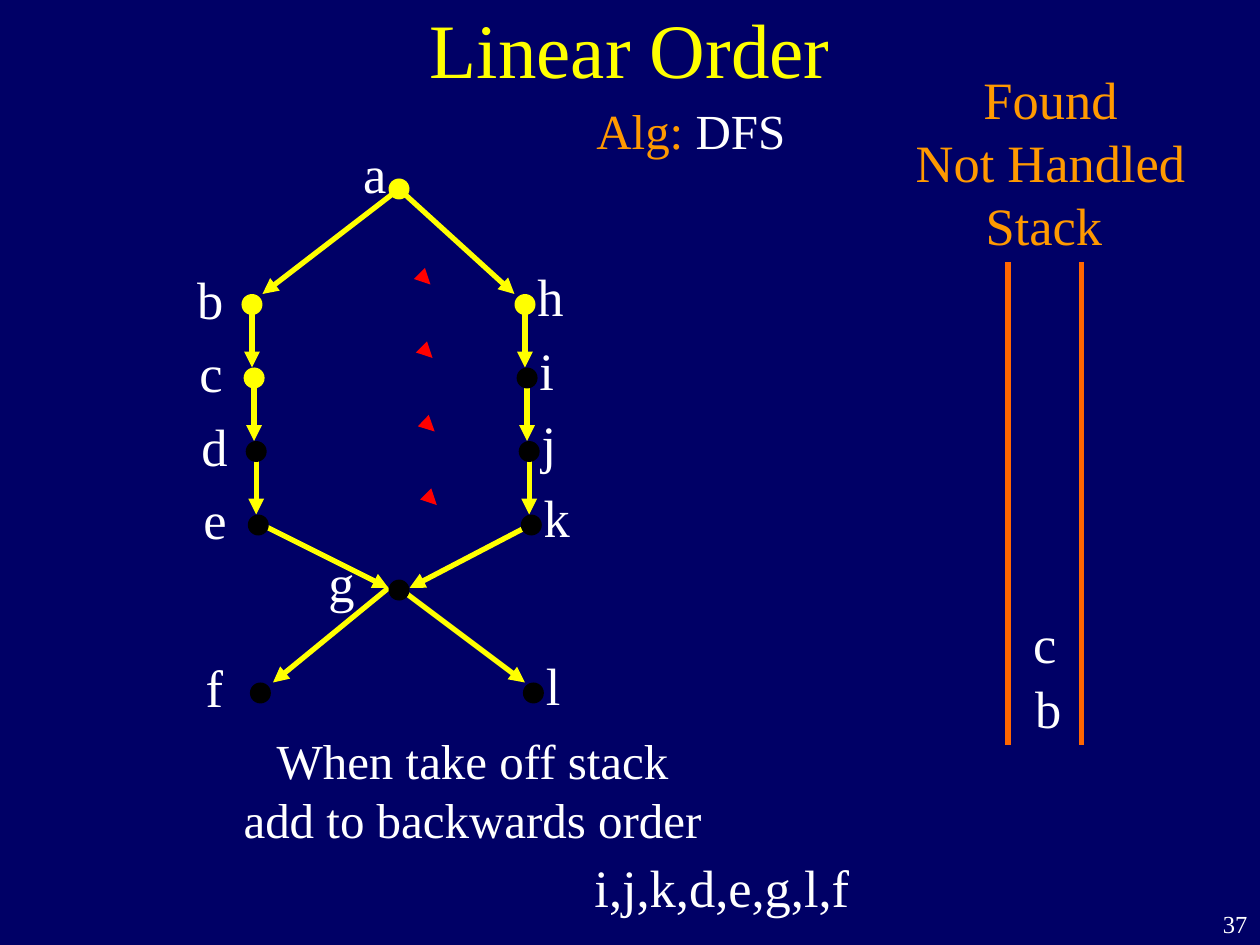
from pptx import Presentation
from pptx.dml.color import RGBColor
from pptx.enum.shapes import MSO_CONNECTOR as Connector, MSO_SHAPE as Shape
from pptx.enum.text import MSO_ANCHOR as Anchor, MSO_AUTO_SIZE as AutoSize, PP_ALIGN as Align
from pptx.oxml.ns import qn
from pptx.util import Inches, Pt
from lxml.etree import SubElement

COLUMNS, ROWS = 120, 90
NAVY, YELLOW, WHITE, BLACK = "000066", "FFFF00", "FFFFFF", "000000"
RED, ORANGE, AMBER = "FF0000", "FF6600", "FF9900"


def color(value):
    return RGBColor.from_string(value)


class SlideBuilder:
    font = "Times New Roman"
    line_width = Pt(3)
    dot_size = 2

    def __init__(self, presentation, layout_index):
        layout = presentation.slide_layouts[layout_index]
        self.slide = presentation.slides.add_slide(layout)
        self.column = presentation.slide_width / COLUMNS
        self.row = presentation.slide_height / ROWS
        background = self.slide.background.fill
        background.solid()
        background.fore_color.rgb = color(NAVY)

    def x(self, columns):
        return round(columns * self.column)

    def y(self, rows):
        return round(rows * self.row)

    def box(self, left, top, width, height):
        return self.x(left), self.y(top), self.x(width), self.y(height)

    def fill_frame(self, frame, lines, size, align):
        """Each line is a list of (text, colour) runs."""
        paragraph = frame.paragraphs[0]
        paragraph.alignment = align
        for number, line in enumerate(lines):
            if number:
                paragraph.add_line_break()
            for text, hue in line:
                run = paragraph.add_run()
                run.text = text
                formats = {"name": self.font, "size": Pt(size), "bold": False}
                for name, value in formats.items():
                    setattr(run.font, name, value)
                run.font.color.rgb = color(hue)

    def title(self, text, area):
        title = self.slide.shapes.title
        for name, value in zip(("left", "top", "width", "height"), self.box(*area)):
            setattr(title, name, value)
        formats = {"vertical_anchor": Anchor.MIDDLE, "auto_size": AutoSize.NONE}
        for name, value in formats.items():
            setattr(title.text_frame, name, value)
        self.fill_frame(title.text_frame, [[(text, YELLOW)]], 44, Align.CENTER)

    def text(self, lines, area, size=30, align=Align.LEFT):
        frame = self.slide.shapes.add_textbox(*self.box(*area)).text_frame
        formats = {"word_wrap": False, "auto_size": AutoSize.SHAPE_TO_FIT_TEXT}
        for name, value in formats.items():
            setattr(frame, name, value)
        self.fill_frame(frame, lines, size, align)

    def line(self, start, end, hue, arrow=False):
        connector = self.slide.shapes.add_connector(
            Connector.STRAIGHT, self.x(start[0]), self.y(start[1]),
            self.x(end[0]), self.y(end[1]))
        connector.line.width = self.line_width
        connector.line.color.rgb = color(hue)
        properties = connector.element.spPr
        if arrow:
            SubElement(properties.find(qn("a:ln")), qn("a:tailEnd"), type="triangle")
        SubElement(properties, qn("a:effectLst"))

    def dot(self, center, hue):
        half = self.dot_size / 2
        dot = self.slide.shapes.add_shape(Shape.OVAL, *self.box(
            center[0] - half, center[1] - half, self.dot_size, self.dot_size))
        dot.shadow.inherit = False
        dot.fill.solid()
        dot.fill.fore_color.rgb = color(hue)
        dot.line.fill.background()


# Graph layout: two chains, each drifting slightly right, joined at a and g
LEVELS = (29, 36, 43, 50, 66)
DRIFT = 0.2
FOUND = "abch"
LETTER_WIDTHS = {"a": 4.7, "c": 4.7, "e": 4.7, "f": 4.1, "i": 3.8, "j": 3.8, "l": 3.8}

nodes = {"a": (38, 18), "g": (38, 56.2)}
labels = {"a": (33.4, 12.8), "g": (30.1, 51.8)}
for step, (left, right, level) in enumerate(zip("bcdef", "hijkl", LEVELS)):
    shift = DRIFT * step
    nodes[left] = (24 + shift, level)
    nodes[right] = (50 + shift, level)
    labels[left] = (17.6 + shift, level - 4.2)
    labels[right] = (50 + shift, level - 4.4)

EDGES = [((38, 18), (25, 28)), ((38, 18), (49, 28)),
         ((25, 50), (37, 56)), ((50.5, 50), (39, 56)),
         ((37, 56), (26, 65)), ((38, 56), (50, 65))]
EDGES += [(nodes[name], (nodes[name][0], nodes[name][1] + 6)) for name in "bcdhij"]


def letter(builder, name, left, top):
    builder.text([[(name, WHITE)]], (left, top, LETTER_WIDTHS.get(name, 4.9), 7.2))


def main():
    presentation = Presentation()
    presentation.slide_width = Inches(10)
    presentation.slide_height = Inches(7.5)
    builder = SlideBuilder(presentation, 5)

    # Title and slide number
    builder.title("Linear Order", (9, -3, 102, 15))
    builder.text([[("37", WHITE)]], (114, 86, 6, 4), 14, Align.RIGHT)

    # Graph edges, then the red arrowheads between the chains
    for start, end in EDGES:
        builder.line(start, end, YELLOW, arrow=True)
    for step in range(4):
        tip = (40.9 + DRIFT * step, 27 + 7 * step)
        builder.line(tip, (tip[0] + 0.1, tip[1] + 0.1), RED, arrow=True)

    # Node labels and dots
    for name, center in nodes.items():
        letter(builder, name, *labels[name])
        builder.dot(center, YELLOW if name in FOUND else BLACK)

    # Stack with its heading and contents
    for column in (96, 103):
        builder.line((column, 25), (column, 71), ORANGE)
    heading = ("Found", "Not Handled", "Stack ")
    builder.text([[(line, AMBER)] for line in heading],
                 (86, 5.8, 28.1, 19.2), align=Align.CENTER)
    letter(builder, "c", 97.2, 57.6)
    letter(builder, "b", 97.4, 63.8)

    # Algorithm name, rule and resulting order
    builder.text([[("Alg:", AMBER), (" DFS", WHITE)]],
                 (55.6, 9, 20.4, 6.8), 28, Align.CENTER)
    rule = ("When take off stack", "add to backwards order")
    builder.text([[(line, WHITE)] for line in rule],
                 (22, 69, 46, 12.4), 28, Align.CENTER)
    builder.text([[("i,j,k,d,e,g,l,f", WHITE)]], (55.3, 80.8, 26.8, 7.2),
                 align=Align.RIGHT)

    presentation.save("out.pptx")


if __name__ == "__main__":
    main()
